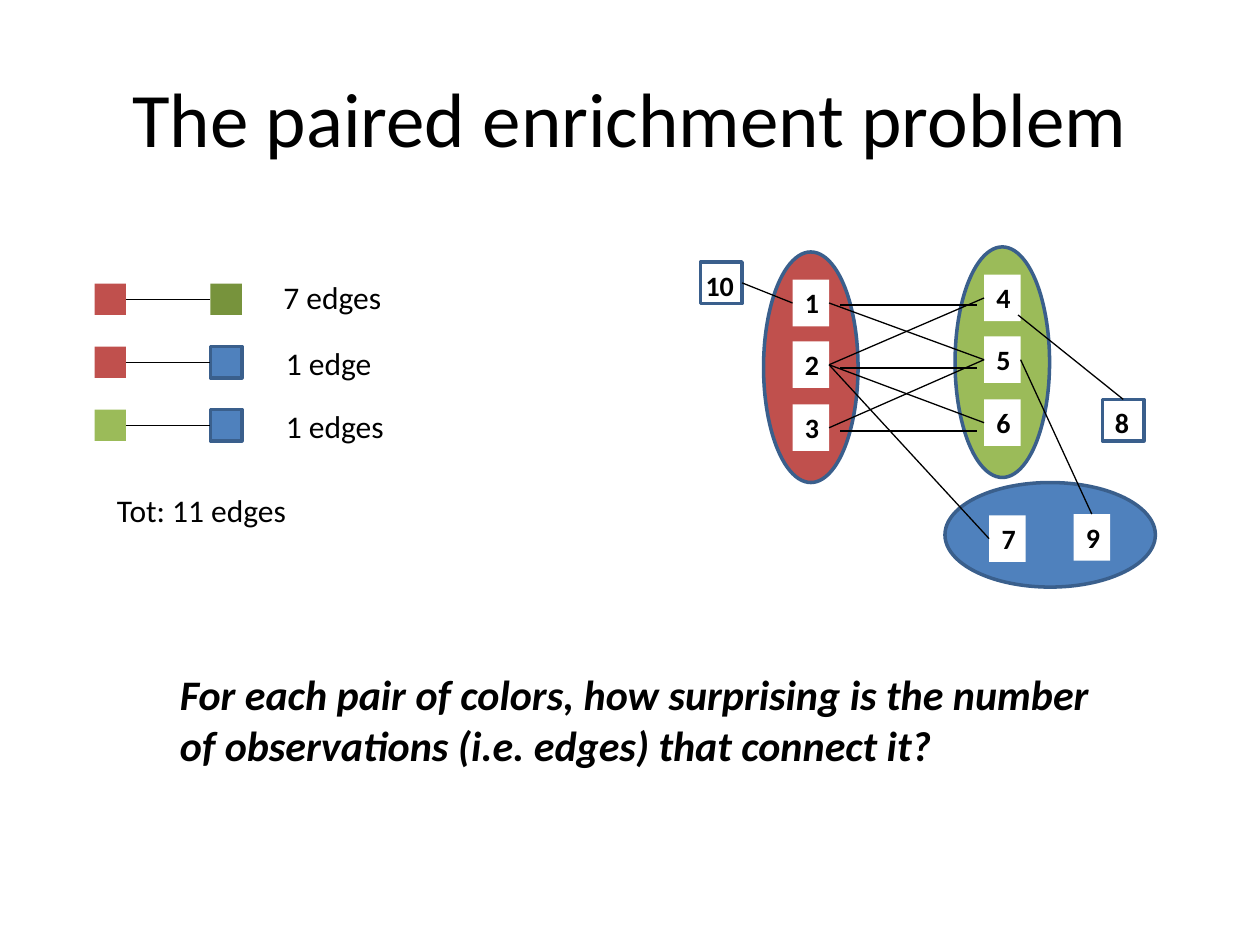
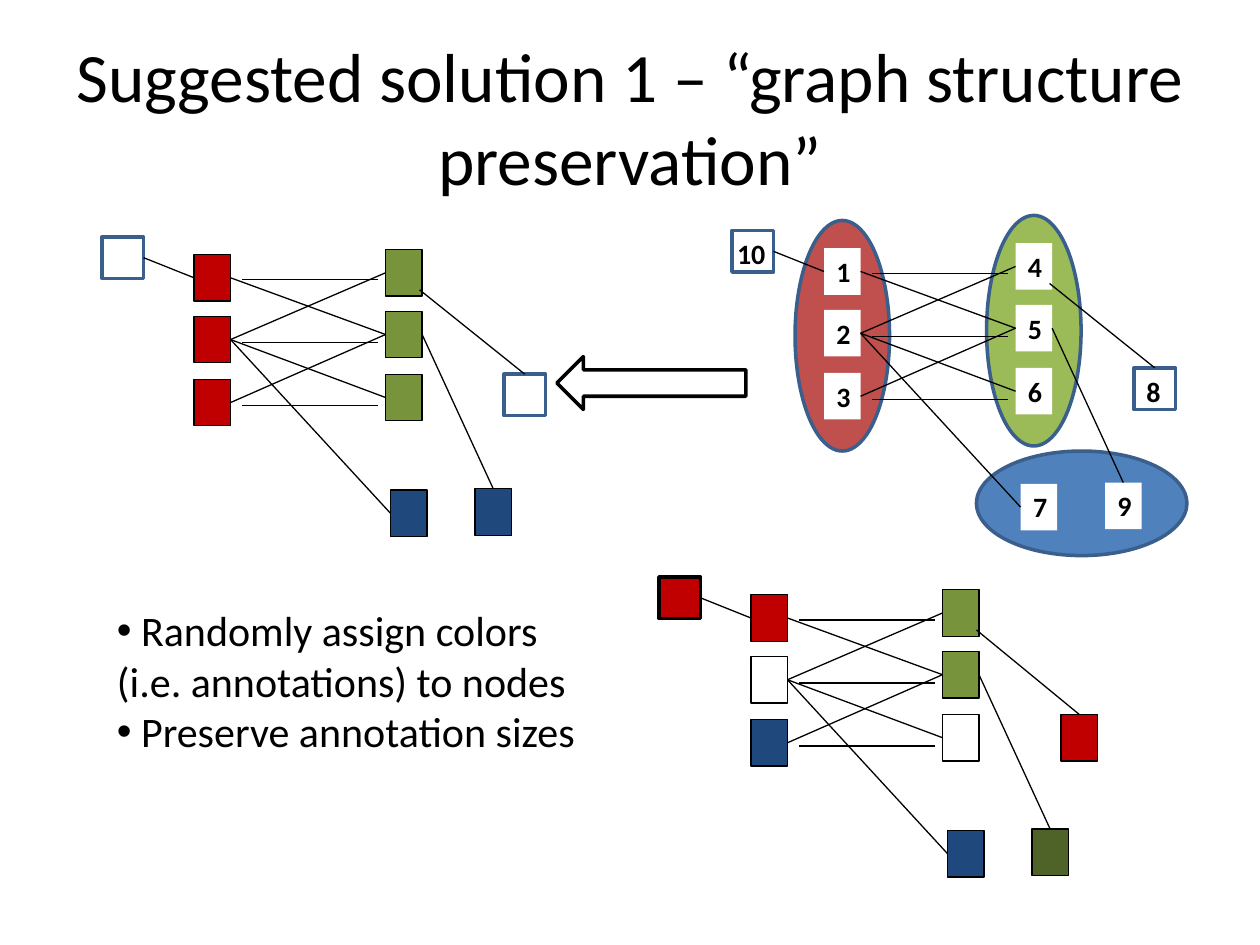
from lxml import etree
from pptx import Presentation
from pptx.dml.color import RGBColor
from pptx.enum.shapes import MSO_CONNECTOR, MSO_SHAPE as SHAPE
from pptx.enum.text import MSO_ANCHOR as ANCHOR, PP_ALIGN as ALIGN
from pptx.oxml.ns import qn
from pptx.util import Pt

PX = 9144  # one px is a hundredth of an inch
FONT = "Calibri"
BLACK = RGBColor(0x00, 0x00, 0x00)
WHITE = RGBColor(0xFF, 0xFF, 0xFF)
RED = RGBColor(0xC0, 0x50, 0x4D)
GREEN = RGBColor(0x9B, 0xBB, 0x59)
BLUE = RGBColor(0x4F, 0x81, 0xBD)
OUTLINE = RGBColor(0x3A, 0x5F, 0x8C)
DARK_RED = RGBColor(0xC0, 0x00, 0x00)
DARK_GREEN = RGBColor(0x77, 0x93, 0x3C)
DEEP_GREEN = RGBColor(0x4F, 0x62, 0x28)
DARK_BLUE = RGBColor(0x1F, 0x49, 0x7D)
TOP, LEFT, RIGHT = 0, 1, 3


def add_box(shapes, kind, box, fill=None, line=None, weight=2):
    """Add a preset shape at box (left, top, width, height in px)."""
    shape = shapes.add_shape(kind, *(value * PX for value in box))
    shape.shadow.inherit = False
    if fill is None:
        shape.fill.background()
    else:
        shape.fill.solid()
        shape.fill.fore_color.rgb = fill
    if line is None:
        shape.line.fill.background()
    else:
        shape.line.color.rgb = line
        shape.line.width = Pt(weight)
    return shape


def add_text(paragraph, text, size, bold=False, italic=False, align=ALIGN.LEFT):
    paragraph.alignment = align
    run = paragraph.add_run()
    run.text = text
    run.font.name = FONT
    run.font.size = Pt(size)
    run.font.bold = bold
    run.font.italic = italic
    run.font.color.rgb = BLACK


presentation = Presentation()
presentation.slide_width = 1000 * PX
presentation.slide_height = 750 * PX
blank = presentation.slide_layouts[6]
problem = presentation.slides.add_slide(blank)
solution = presentation.slides.add_slide(blank)
connectors = []

# Titles
for slide, title, size in [
    (problem, "The paired enrichment problem", 44),
    (solution, "Suggested solution 1 – “graph structure preservation”", 39.6),
]:
    box = slide.shapes.add_textbox(50 * PX, 30 * PX, 900 * PX, 125 * PX)
    box.text_frame.word_wrap = True
    box.text_frame.vertical_anchor = ANCHOR.MIDDLE
    add_text(box.text_frame.paragraphs[0], title, size, align=ALIGN.CENTER)

# Graphs: offsets are measured from the corner of node 10
NODES = {
    1: (73, 14), 2: (73, 63), 3: (73, 113),
    4: (225, 10), 5: (225, 59), 6: (225, 109),
    7: (229, 201), 8: (319, 109), 9: (296, 200), 10: (0, 0),
}
ANNOTATIONS = [
    (50, -8, 75, 183, RED),
    (202, -12, 75, 183, GREEN),
    (194, 175, 167, 83, BLUE),
]
EDGES = [
    (1, RIGHT, 5, LEFT), (1, LEFT, 10, RIGHT), (2, RIGHT, 4, LEFT),
    (2, RIGHT, 6, LEFT), (3, RIGHT, 5, LEFT), (9, TOP, 5, RIGHT),
    (2, RIGHT, 7, LEFT),
]
LEVEL_EDGES = [34, 84, 134]
clustered = {
    **dict.fromkeys((1, 2, 3), DARK_RED),
    **dict.fromkeys((4, 5, 6), DARK_GREEN),
    **dict.fromkeys((7, 9), DARK_BLUE),
}
shuffled = {
    **dict.fromkeys((1, 8, 10), DARK_RED),
    **dict.fromkeys((4, 5), DARK_GREEN),
    **dict.fromkeys((3, 7), DARK_BLUE),
    9: DEEP_GREEN,
}

for slide, x, y, colours in [
    (problem, 556, 208, {}),
    (solution, 581, 183, {}),
    (solution, 81, 188, clustered),
    (solution, 523, 458, shuffled),
]:
    shapes = slide.shapes.add_group_shape().shapes
    labelled = not colours
    if labelled:
        for left, top, width, height, fill in ANNOTATIONS:
            add_box(shapes, SHAPE.OVAL, (x + left, y + top, width, height), fill, OUTLINE)

    nodes = {}
    for number, (left, top) in NODES.items():
        fill = colours.get(number, WHITE)
        square = number == 10 or (number == 8 and 8 not in colours)
        if square:
            size, weight = (33, 33), 2
            line = BLACK if number in colours else OUTLINE
        else:
            size, weight = (29, 37), 0.75
            line = None if labelled else BLACK
        node = add_box(shapes, SHAPE.RECTANGLE, (x + left, y + top, *size), fill, line, weight)
        nodes[number] = node
        if labelled:
            frame = node.text_frame
            frame.word_wrap = False
            frame.vertical_anchor = ANCHOR.TOP
            frame.margin_left = (4 if number == 10 else 10) * PX
            frame.margin_right = 0
            add_text(frame.paragraphs[0], str(number), 16, bold=True)

    for level in LEVEL_EDGES:
        connectors.append(shapes.add_connector(
            MSO_CONNECTOR.STRAIGHT,
            (x + 111) * PX, (y + level) * PX, (x + 219) * PX, (y + level) * PX))
    for start, start_side, end, end_side in EDGES:
        first, last = nodes[start], nodes[end]
        edge = shapes.add_connector(
            MSO_CONNECTOR.STRAIGHT, first.left, first.top, last.left, last.top)
        edge.begin_connect(first, start_side)
        edge.end_connect(last, end_side)
        connectors.append(edge)
    edge = shapes.add_connector(
        MSO_CONNECTOR.STRAIGHT,
        nodes[8].left, nodes[8].top, (x + 252) * PX, (y + 42) * PX)
    edge.begin_connect(nodes[8], TOP)
    connectors.append(edge)

# Edge counts for each pair of colours
for row, (first_fill, second_fill, second_line) in enumerate([
    (RED, DARK_GREEN, None),
    (RED, BLUE, OUTLINE),
    (GREEN, BLUE, OUTLINE),
]):
    top = 225 + 50 * row
    first = add_box(problem.shapes, SHAPE.RECTANGLE, (75, top, 25, 25), first_fill)
    second = add_box(problem.shapes, SHAPE.RECTANGLE, (167, top, 25, 25), second_fill, second_line)
    link = problem.shapes.add_connector(
        MSO_CONNECTOR.STRAIGHT, first.left, first.top, second.left, second.top)
    link.begin_connect(first, RIGHT)
    link.end_connect(second, LEFT)
    connectors.append(link)

for left, top, width, height, text, size, strong in [
    (215, 216, 208, 40, "7 edges", 18, False),
    (217, 268, 208, 40, "1 edge", 18, False),
    (217, 318, 208, 40, "1 edges", 18, False),
    (83, 385, 208, 40, "Tot: 11 edges", 18, False),
    (133, 526, 750, 91,
     "For each pair of colors, how surprising is the number "
     "of observations (i.e. edges) that connect it?", 24, True),
]:
    box = problem.shapes.add_textbox(left * PX, top * PX, width * PX, height * PX)
    box.text_frame.word_wrap = True
    add_text(box.text_frame.paragraphs[0], text, size, bold=strong, italic=strong)

# Arrow and bullets of the solution
add_box(solution.shapes, SHAPE.LEFT_ARROW, (442, 283, 150, 42), line=BLACK)
box = solution.shapes.add_textbox(83 * PX, 475 * PX, 392 * PX, 172 * PX)
frame = box.text_frame
frame.word_wrap = True
for index, text in enumerate([
    " Randomly assign colors (i.e. annotations) to nodes",
    " Preserve annotation sizes",
]):
    paragraph = frame.add_paragraph() if index else frame.paragraphs[0]
    add_text(paragraph, text, 24)
    properties = paragraph._p.get_or_add_pPr()
    etree.SubElement(properties, qn("a:buFont"), typeface="Arial")
    etree.SubElement(properties, qn("a:buChar"), char="•")

for connector in connectors:
    connector.line.color.rgb = BLACK
    connector.line.width = Pt(0.75)
    etree.SubElement(connector._element.spPr, qn("a:effectLst"))

presentation.save("out.pptx")
